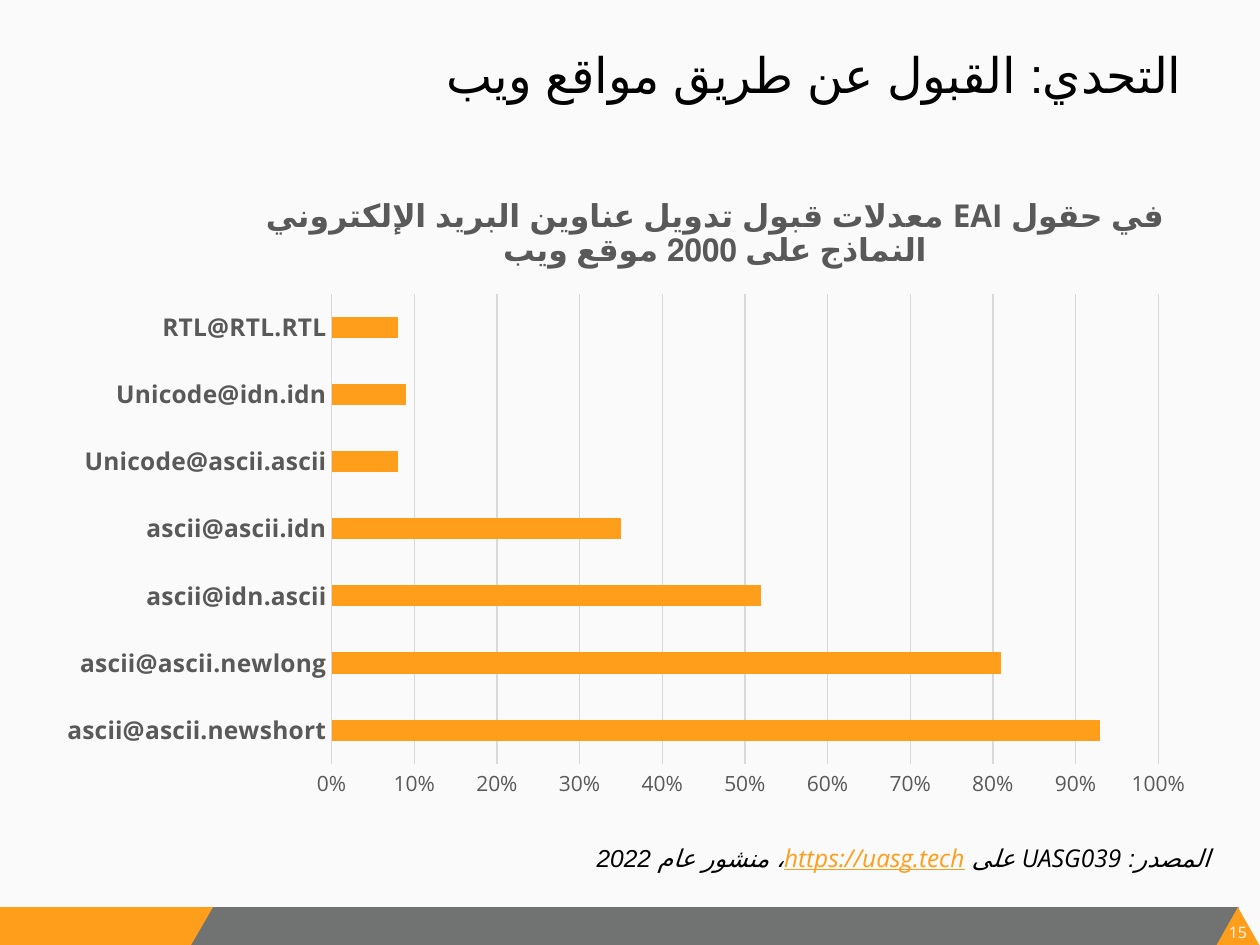
from lxml.etree import SubElement
from pptx import Presentation
from pptx.chart.data import CategoryChartData
from pptx.dml.color import RGBColor
from pptx.enum.chart import XL_CHART_TYPE as ChartType, XL_TICK_MARK as Tick
from pptx.enum.lang import MSO_LANGUAGE_ID as Language
from pptx.enum.shapes import MSO_SHAPE as Shape
from pptx.enum.text import MSO_ANCHOR as Anchor, MSO_AUTO_SIZE as AutoSize, PP_ALIGN as Align
from pptx.oxml import parse_xml
from pptx.oxml.ns import nsdecls, qn
from pptx.util import Inches, Pt

BODY_FONT, ARABIC_FONT = "Open Sans", "Arial"
ORANGE, GRAY, PALE = "FF9E1B", "707372", "FAFAFA"
BLACK, DARK, GRID = "000000", "595959", "D9D9D9"


def color(value):
    return RGBColor.from_string(value)


def style_font(font, size, tint, name=BODY_FONT, bold=False, italic=False):
    font.size, font.name = Pt(size), name
    font.bold, font.italic = bold, italic
    font.color.rgb = color(tint)


def manual_layout(x, y, width=None, height=None):
    """Chart layout given as fractions of the chart area."""
    inner = "" if width is None else '<c:layoutTarget val="inner"/>'
    modes = '<c:xMode val="edge"/><c:yMode val="edge"/>'
    sizes = {"x": x, "y": y, "w": width, "h": height}
    values = "".join(f'<c:{key} val="{value}"/>' for key, value in sizes.items() if value is not None)
    return parse_xml(f'<c:layout {nsdecls("c")}><c:manualLayout>{inner}{modes}{values}'
                     '</c:manualLayout></c:layout>')


def set_layout(parent, layout, before):
    for old in parent.findall(qn("c:layout")):
        parent.remove(old)
    parent.insert(before, layout)


class SlideBuilder:
    def __init__(self, deck):
        self.page = deck.slides.add_slide(deck.slide_layouts[5])
        fill = self.page.background.fill
        fill.solid()
        fill.fore_color.rgb = color(PALE)

    def shape(self, kind, place, tint, rotation=0, adjust=None):
        shape = self.page.shapes.add_shape(kind, *map(Inches, place))
        shape.shadow.inherit = False
        shape.fill.solid()
        shape.fill.fore_color.rgb = color(tint)
        shape.line.fill.background()
        shape.rotation = rotation
        if adjust is not None:
            shape.adjustments[0] = adjust

    def right_to_left(self, para):
        """Set the direction, language and Arabic script font of a filled paragraph."""
        para.alignment = Align.RIGHT
        properties = para._p.get_or_add_pPr()
        properties.set("rtl", "1")
        SubElement(properties.find(qn("a:defRPr")), qn("a:cs"), typeface=ARABIC_FONT)
        for span in para.runs:
            span.font.language_id = Language.ARABIC

    def title(self, place, text):
        box = self.page.shapes.title
        box.left, box.top, box.width, box.height = map(Inches, place)
        frame = box.text_frame
        frame.text = text
        frame.auto_size, frame.vertical_anchor = AutoSize.NONE, Anchor.TOP
        para = frame.paragraphs[0]
        style_font(para.font, 28, BLACK, ARABIC_FONT)
        self.right_to_left(para)

    def text_box(self, place):
        frame = self.page.shapes.add_textbox(*map(Inches, place)).text_frame
        frame.word_wrap = True
        frame.auto_size = AutoSize.SHAPE_TO_FIT_TEXT
        return frame

    def page_number(self, place, text):
        frame = self.text_box(place)
        frame.margin_left = frame.margin_right = frame.margin_top = frame.margin_bottom = 0
        frame.word_wrap = False
        para = frame.paragraphs[0]
        para.text, para.alignment = text, Align.CENTER
        style_font(para.font, 9, PALE)

    def source(self, place, lead, address, tail):
        para = self.text_box(place).paragraphs[0]
        style_font(para.font, 14, BLACK, italic=True)
        for text in (lead, address, tail):
            span = para.add_run()
            span.text = text
            if text == address:
                span.font.color.rgb = color(ORANGE)
                span.font.underline = True
        self.right_to_left(para)

    def bar_chart(self, place, title, rates):
        data = CategoryChartData(number_format="0%")
        data.categories = list(rates)
        data.add_series("Series 1", list(rates.values()))
        chart = self.page.shapes.add_chart(
            ChartType.BAR_CLUSTERED, *map(Inches, place), data).chart
        style_font(chart.font, 10, BLACK)
        chart.has_legend = False

        # Heading and plot area
        chart.has_title = True
        chart.chart_title.include_in_layout = False
        para = chart.chart_title.text_frame.paragraphs[0]
        para.text = title
        style_font(para.font, 18, DARK, bold=True)
        style_font(para.runs[0].font, 18, DARK, bold=True)
        set_layout(chart.chart_title._element, manual_layout(0.186, 0.014), 1)
        set_layout(chart._chartSpace.chart.plotArea, manual_layout(0.247, 0.187, 0.71, 0.74), 0)

        # Bars
        plot = chart.plots[0]
        plot.gap_width, plot.vary_by_categories = 219, False
        bars = plot.series[0].format.fill
        bars.solid()
        bars.fore_color.rgb = color(ORANGE)

        # Axes
        names, values = chart.category_axis, chart.value_axis
        for axis in (names, values):
            axis.major_tick_mark = axis.minor_tick_mark = Tick.NONE
        style_font(names.tick_labels.font, 14, DARK, bold=True)
        style_font(values.tick_labels.font, 12, DARK)
        names.has_major_gridlines = False
        values.has_major_gridlines = True
        for line in (names.format.line, values.major_gridlines.format.line):
            line.color.rgb, line.width = color(GRID), Pt(0.75)
        values.format.line.fill.background()
        values.minimum_scale, values.maximum_scale, values.major_unit = 0, 1, 0.1
        values.tick_labels.number_format = "0%"
        values.tick_labels.number_format_is_linked = False


def main():
    deck = Presentation()
    deck.slide_width, deck.slide_height = Inches(10), Inches(7.5)
    slide = SlideBuilder(deck)

    # Footer band
    slide.shape(Shape.RECTANGLE, (0.81, 7.2, 9.02, 0.31), GRAY)
    slide.shape(Shape.RECTANGLE, (0, 7.2, 1.5, 0.31), ORANGE)
    slide.shape(Shape.ISOSCELES_TRIANGLE, (9.65, 7.2, 0.35, 0.31), ORANGE)
    slide.page_number((9.74, 7.32, 0.17, 0.15), "15")
    slide.shape(Shape.PARALLELOGRAM, (1.34, 7.2, 0.35, 0.31), ORANGE, 180, 0.58)
    slide.shape(Shape.RECTANGLE, (1.43, 7.2, 0.14, 0.13), ORANGE)

    # Title
    slide.title((0.35, 0.3, 9.24, 1.25), " التحدي: القبول عن طريق مواقع ويب")

    # Acceptance rates
    slide.bar_chart(
        (0.35, 1.39, 9.24, 5.04),
        "معدلات قبول تدويل عناوين البريد الإلكتروني EAI في حقول النماذج على 2000 موقع ويب",
        {
            "ascii@ascii.newshort": 0.93,
            "ascii@ascii.newlong": 0.81,
            "ascii@idn.ascii": 0.52,
            "ascii@ascii.idn": 0.35,
            "Unicode@ascii.ascii": 0.08,
            "Unicode@idn.idn": 0.09,
            "RTL@RTL.RTL": 0.08,
        })

    # Source line
    slide.source((2.35, 6.64, 7.35, 0.34),
                 "المصدر: UASG039 على ", "https://uasg.tech", "، منشور عام 2022")

    deck.save("out.pptx")


if __name__ == "__main__":
    main()
